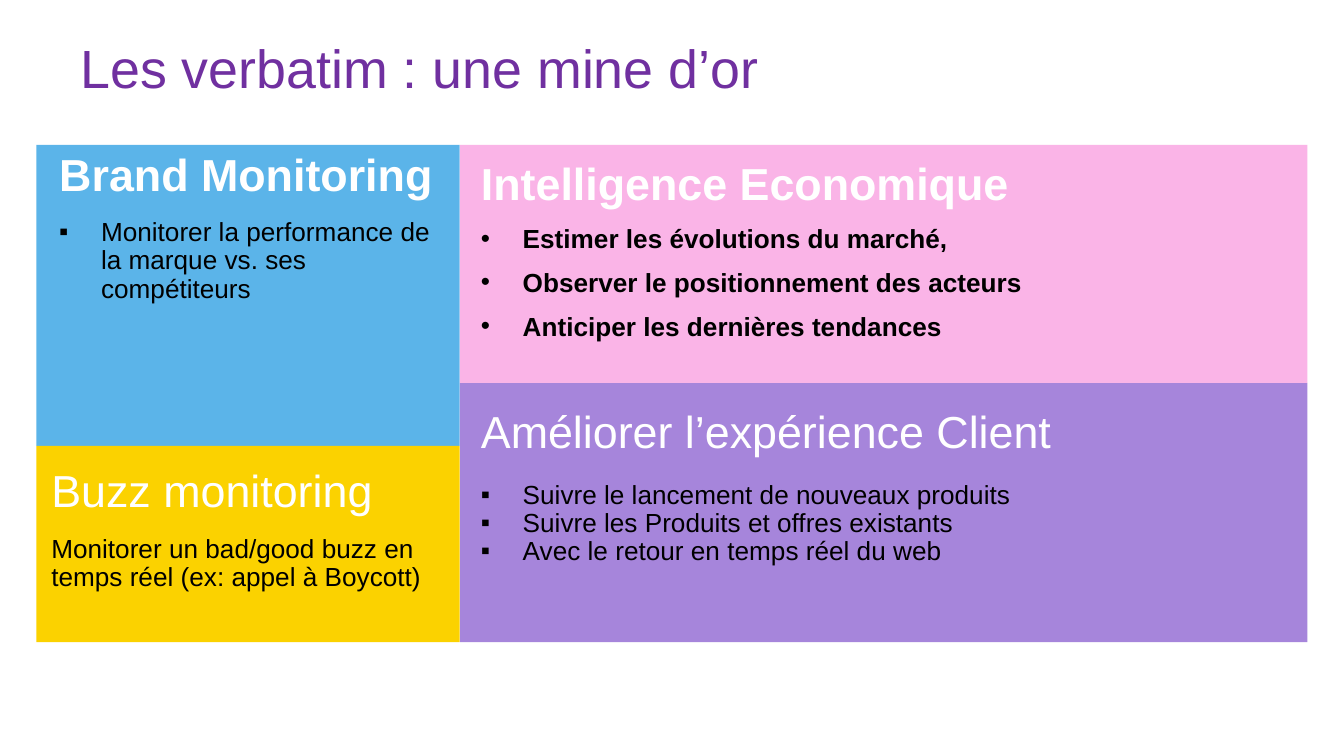
from lxml import etree
from pptx import Presentation
from pptx.dml.color import RGBColor
from pptx.enum.shapes import MSO_SHAPE
from pptx.enum.text import MSO_ANCHOR
from pptx.oxml.ns import qn
from pptx.util import Cm, Pt

RECTANGLE = MSO_SHAPE.RECTANGLE
MIDDLE = MSO_ANCHOR.MIDDLE
FONT = "Arial"
BLUE = RGBColor(0x5B, 0xB4, 0xE9)
VIOLET = RGBColor(0xA6, 0x85, 0xDB)
PINK = RGBColor(0xFA, 0xB4, 0xE7)
YELLOW = RGBColor(0xFB, 0xD2, 0x00)
PURPLE = RGBColor(0x70, 0x30, 0xA0)
WHITE = RGBColor(0xFF, 0xFF, 0xFF)
BLACK = RGBColor(0x00, 0x00, 0x00)

LEFT, MIDDLE_X, RIGHT = 0.69, 8.69, 24.71
TOP, BOTTOM = 2.74, 12.14
LEFT_SPLIT, RIGHT_SPLIT = 8.43, 7.24
INDENT = Cm(0.79)


def add_panel(s, left, top, right, bottom, color):
    """Draw a plain coloured panel between the given edges."""
    sp = s.shapes.add_shape(RECTANGLE, Cm(left), Cm(top), Cm(right - left), Cm(bottom - top))
    sp.shadow.inherit = False
    sp.fill.solid()
    sp.fill.fore_color.rgb = color
    sp.line.fill.background()


def add_box(s, left, top, width, height, margin_x=0, margin_y=0):
    """Add a wrapping text box and return its text frame."""
    tf = s.shapes.add_textbox(Cm(left), Cm(top), Cm(width), Cm(height)).text_frame
    tf.word_wrap = True
    tf.margin_left = tf.margin_right = Cm(margin_x)
    tf.margin_top = tf.margin_bottom = Cm(margin_y)
    return tf


def set_bullet(p, bullet):
    """Give a paragraph a hanging bullet."""
    pPr = p._p.get_or_add_pPr()
    pPr.set("marL", str(INDENT))
    pPr.set("indent", str(-INDENT))
    etree.SubElement(pPr, qn("a:buFont")).set("typeface", FONT)
    etree.SubElement(pPr, qn("a:buChar")).set("char", bullet)


def write(p, text, size, color, bold=False, spacing=None, before=0):
    """Fill a paragraph with one formatted run."""
    p.text = text
    p.line_spacing = spacing
    p.space_before = Pt(before)
    font = p.runs[0].font
    font.name, font.size, font.bold = FONT, Pt(size), bold
    font.color.rgb = color


def add_topic(s, box, heading, lines, bullet=None, bold_heading=False, bold_lines=False,
              heading_spacing=0.9, spacing=0.9, first_before=10, before=0):
    """Add a white heading followed by its black lines."""
    tf = add_box(s, *box)
    write(tf.paragraphs[0], heading, 24, WHITE, bold_heading, heading_spacing)
    for i, line in enumerate(lines):
        p = tf.add_paragraph()
        if bullet:
            set_bullet(p, bullet)
        write(p, line, 14, BLACK, bold_lines, spacing, before if i else first_before)


def main():
    """Build the slide and save it."""
    prs = Presentation()
    prs.slide_width, prs.slide_height = Cm(25.4), Cm(14.29)
    s = prs.slides.add_slide(prs.slide_layouts[6])

    add_panel(s, LEFT, TOP, MIDDLE_X, LEFT_SPLIT, BLUE)
    add_panel(s, MIDDLE_X, RIGHT_SPLIT, RIGHT, BOTTOM, VIOLET)
    add_panel(s, MIDDLE_X, TOP, RIGHT, RIGHT_SPLIT, PINK)
    add_panel(s, LEFT, LEFT_SPLIT, MIDDLE_X, BOTTOM, YELLOW)

    add_topic(s, (1.12, 3.1, 7.11, 3.66), "Brand Monitoring",
              ["Monitorer la performance de la marque vs. ses compétiteurs"],
              bullet="▪", bold_heading=True, heading_spacing=Pt(19.5))
    add_topic(s, (9.09, 2.95, 15.42, 3.63), "Intelligence Economique",
              ["Estimer les évolutions du marché,",
               "Observer le positionnement des acteurs",
               "Anticiper les dernières tendances"],
              bullet="•", bold_heading=True, bold_lines=True,
              heading_spacing=1.0, spacing=Pt(13.5), before=10)
    add_topic(s, (9.09, 7.75, 14.81, 3.48), "Améliorer l’expérience Client",
              ["Suivre le lancement de nouveaux produits",
               "Suivre les Produits et offres existants",
               "Avec le retour en temps réel du web"],
              bullet="▪", first_before=12.5)
    add_topic(s, (0.97, 8.86, 7.52, 3.48), "Buzz monitoring",
              ["Monitorer un bad/good buzz en temps réel (ex: appel à Boycott)"])

    tf = add_box(s, 1.27, 0.58, 22.86, 1.37, 0.25, 0.13)
    tf.vertical_anchor = MIDDLE
    write(tf.paragraphs[0], "Les verbatim : une mine d’or", 28.8, PURPLE)

    prs.save("out.pptx")


if __name__ == "__main__":
    main()
